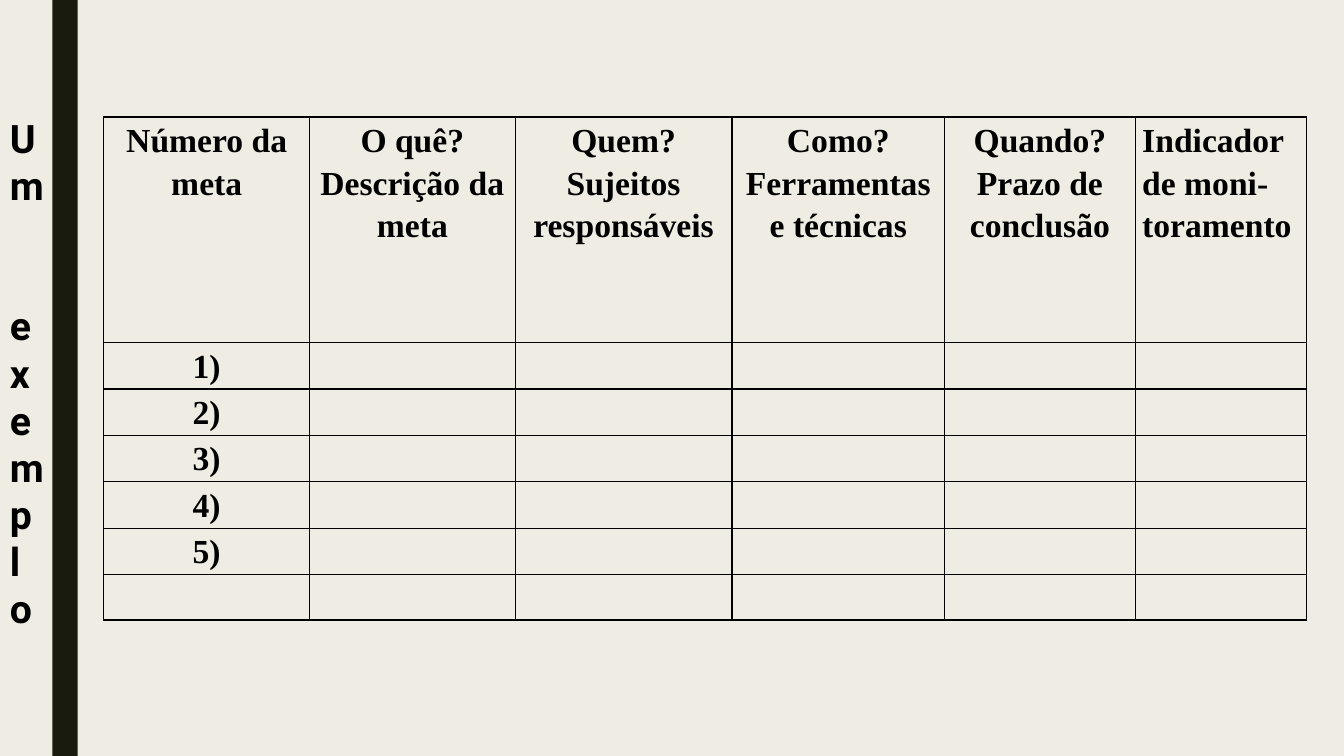
from lxml import etree
from pptx import Presentation
from pptx import util as u
from pptx.dml.color import RGBColor
from pptx.enum import shapes, text
from pptx.oxml.ns import qn

COLORS = {"background": "EFEDE3", "bar": "191B0E", "ink": "000000"}
HEADERS = [
    ["Número da meta"],
    ["O quê?", "Descrição da meta"],
    ["Quem?", "Sujeitos responsáveis"],
    ["Como?", "Ferramentas e técnicas"],
    ["Quando?", "Prazo de conclusão"],
    ["Indicador de moni- toramento"],
]
COL_WIDTHS = [2.04, 2.04, 2.15, 2.11, 1.89, 1.7]
ROW_HEIGHTS = [2.24] + [0.45] * 6
GOALS = 5


class SlideBuilder:
    title_font = "Roboto"
    table_font = "Times New Roman"

    def __init__(self, prs):
        self.s = prs.slides.add_slide(prs.slide_layouts[6])
        fill = self.s.background.fill
        fill.solid()
        fill.fore_color.rgb = self.color("background")

    def color(self, name):
        return RGBColor.from_string(COLORS[name])

    def set_text(self, tf, lines, font, size):
        tf.text = "\n".join(lines)
        for p in tf.paragraphs:
            p.font.name = font
            p.font.size = u.Pt(size)
            p.font.bold = True
            p.font.color.rgb = self.color("ink")

    def bar(self, x, y, w, h):
        sp = self.s.shapes.add_shape(shapes.MSO_SHAPE.RECTANGLE, *map(u.Inches, (x, y, w, h)))
        sp.shadow.inherit = False
        sp.fill.solid()
        sp.fill.fore_color.rgb = self.color("bar")
        sp.line.fill.background()

    def vertical_title(self, words, x, y, w, h):
        tf = self.s.shapes.add_textbox(*map(u.Inches, (x, y, w, h))).text_frame
        tf.word_wrap = True
        self.set_text(tf, words, self.title_font, 28)
        for p in tf.paragraphs[1:]:
            p.space_before = u.Pt(67)

    def borders(self, cell):
        tcPr = cell._tc.get_or_add_tcPr()
        for i, side in enumerate("LRTB"):
            ln = etree.Element(qn(f"a:ln{side}"), w=str(u.Pt(1)))
            fill = etree.SubElement(ln, qn("a:solidFill"))
            etree.SubElement(fill, qn("a:srgbClr"), val=COLORS["ink"])
            tcPr.insert(i, ln)

    def cell(self, cell, lines, align):
        cell.fill.background()
        self.borders(cell)
        if not lines:
            return
        cell.margin_left = cell.margin_right = u.Inches(0.07)
        cell.margin_top = cell.margin_bottom = 0
        self.set_text(cell.text_frame, lines, self.table_font, 24)
        for p in cell.text_frame.paragraphs:
            p.alignment = align
            p.line_spacing = 1.15

    def table(self, rows, x, y):
        size = (x, y, sum(COL_WIDTHS), sum(ROW_HEIGHTS))
        tbl = self.s.shapes.add_table(len(ROW_HEIGHTS), len(COL_WIDTHS), *map(u.Inches, size)).table
        tbl.first_row = tbl.horz_banding = False
        for col, width in zip(tbl.columns, COL_WIDTHS):
            col.width = u.Inches(width)
        for row, height in zip(tbl.rows, ROW_HEIGHTS):
            row.height = u.Inches(height)
        last = len(COL_WIDTHS) - 1
        for r, row in enumerate(rows):
            for c, lines in enumerate(row):
                align = text.PP_ALIGN.LEFT if c == last else text.PP_ALIGN.CENTER
                self.cell(tbl.cell(r, c), lines, align)


def main():
    prs = Presentation()
    prs.slide_width, prs.slide_height = u.Inches(13.33), u.Inches(7.5)
    b = SlideBuilder(prs)
    b.bar(0.52, 0, 0.25, 7.5)
    b.vertical_title(["Um", "exemplo"], 0, 1.08, 0.28, 4.81)
    blanks = [[]] * (len(HEADERS) - 1)
    goals = [[[f"{n})"]] + blanks for n in range(1, GOALS + 1)]
    b.table([HEADERS] + goals + [[[]] + blanks], 1.03, 1.16)
    prs.save("out.pptx")


if __name__ == "__main__":
    main()
